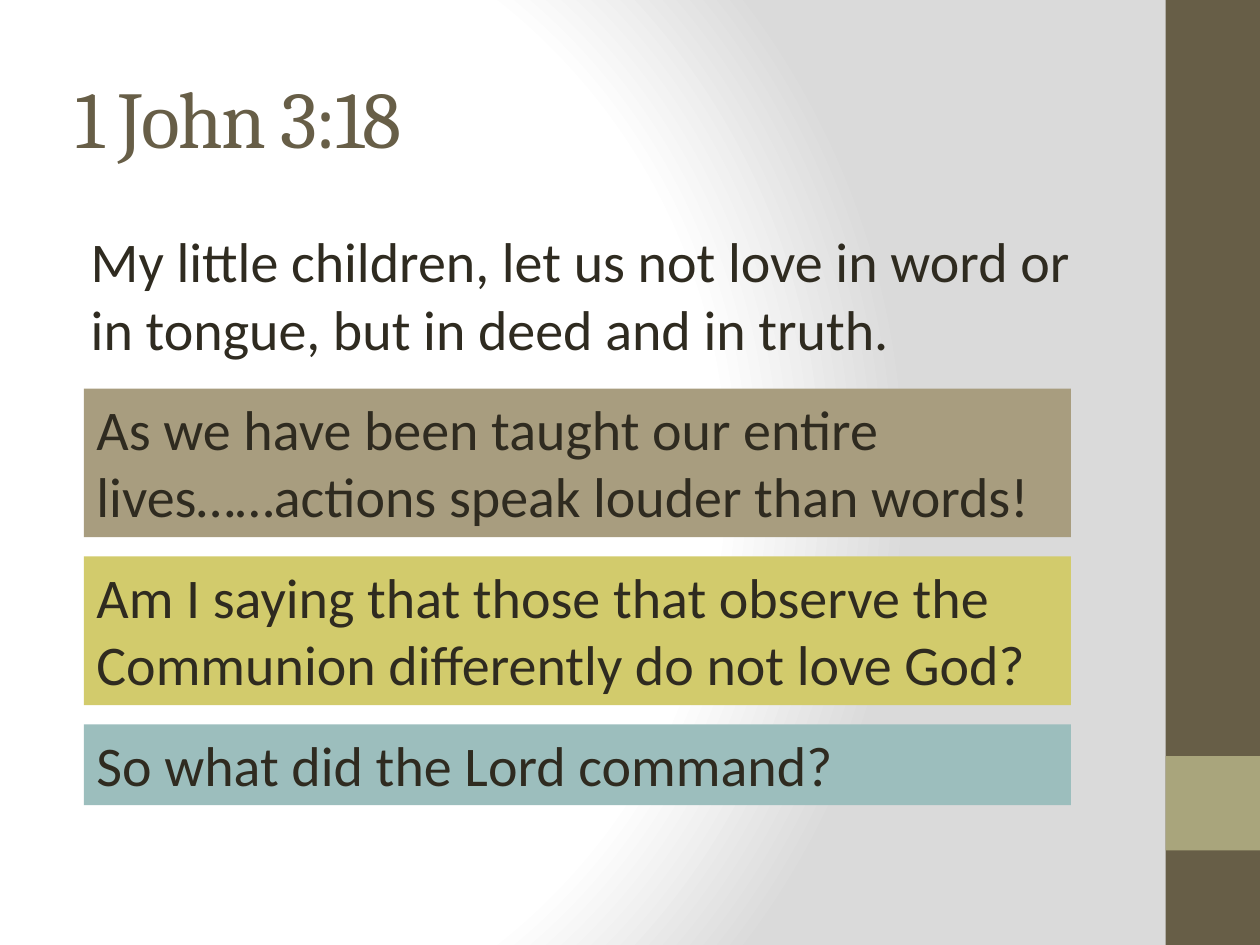
from pptx import Presentation
from pptx.dml.color import RGBColor
from pptx.enum.shapes import MSO_SHAPE as Preset
from pptx.enum.text import MSO_ANCHOR as Anchor, MSO_AUTO_SIZE as AutoSize, PP_ALIGN as Align
from pptx.oxml import parse_xml
from pptx.oxml.ns import nsdecls, qn
from pptx.util import Inches, Pt

BROWN = RGBColor(0x67, 0x5E, 0x47)
OLIVE = RGBColor(0xA9, 0xA5, 0x7C)
INK = RGBColor(0x2F, 0x2B, 0x20)
TAN = RGBColor(0xA8, 0x9D, 0x7F)
YELLOW = RGBColor(0xD2, 0xCB, 0x6C)
TEAL = RGBColor(0x9C, 0xBE, 0xBD)

presentation = Presentation()
presentation.slide_width = Inches(10)
presentation.slide_height = Inches(7.5)
UNIT = presentation.slide_width / 120  # square grid, 120 columns by 90 rows

slide = presentation.slides.add_slide(presentation.slide_layouts[1])


def write(shape, text, size=32, font="Calibri", color=INK, anchor=Anchor.TOP,
          fit=AutoSize.NONE, spacing=None):
    frame = shape.text_frame
    frame.word_wrap = True
    frame.auto_size = fit
    frame.vertical_anchor = anchor
    paragraph = frame.paragraphs[0]
    paragraph.alignment = Align.LEFT
    run = paragraph.add_run()
    run.text = text
    run.font.size = Pt(size)
    run.font.name = font
    run.font.color.rgb = color
    if spacing is not None:
        run.font._element.set("spc", str(spacing))
    return paragraph


def add_block(column, row, columns, rows, color):
    shape = slide.shapes.add_shape(
        Preset.RECTANGLE, *(round(n * UNIT) for n in (column, row, columns, rows)))
    shape.shadow.inherit = False
    shape.fill.solid()
    shape.fill.fore_color.rgb = color
    shape.line.fill.background()
    return shape


# Background: white centre fading to grey on the right
slide.background.fill.gradient()
gradient = slide.element.find(".//" + qn("a:gradFill"))
gradient.getparent().replace(gradient, parse_xml(
    f'<a:gradFill {nsdecls("a")} rotWithShape="1"><a:gsLst>'
    '<a:gs pos="0"><a:srgbClr val="FFFFFF"/></a:gs>'
    '<a:gs pos="75000"><a:srgbClr val="FFFFFF"/></a:gs>'
    '<a:gs pos="100000"><a:srgbClr val="DADADA"/></a:gs></a:gsLst>'
    '<a:path path="circle"><a:fillToRect l="20000" t="50000" r="100000" b="50000"/></a:path>'
    '</a:gradFill>'))

# Side band
add_block(111, 0, 9, 90, BROWN)
add_block(111, 72, 9, 9, OLIVE)

# Title and verse
title, verse = slide.shapes.title, slide.placeholders[1]
for placeholder, row, rows in ((title, 3.6, 15), (verse, 21, 63)):
    placeholder.left, placeholder.top = round(6 * UNIT), round(row * UNIT)
    placeholder.width, placeholder.height = round(100 * UNIT), round(rows * UNIT)
write(title, "1 John 3:18", size=46, font="Cambria", color=BROWN,
      anchor=Anchor.MIDDLE, spacing=-100)
paragraph = write(
    verse, "My little children, let us not love in word or in tongue, but in deed and in truth.")
paragraph.space_before = Pt(6.4)
properties = paragraph._p.get_or_add_pPr()
properties.set("marL", str(Inches(0.12)))
properties.set("indent", "0")
properties.append(parse_xml(f'<a:buNone {nsdecls("a")}/>'))

# Comments, one every 16 rows
comments = (
    ("As we have been taught our entire lives……actions speak louder than words!", 14.16, TAN),
    ("Am I saying that those that observe the Communion differently do not love God?",
     14.16, YELLOW),
    ("So what did the Lord command?", 7.68, TEAL),
)
for index, (text, rows, color) in enumerate(comments):
    box = add_block(8, 37 + 16 * index, 94, rows, color)
    write(box, text, fit=AutoSize.SHAPE_TO_FIT_TEXT)

presentation.save("out.pptx")
